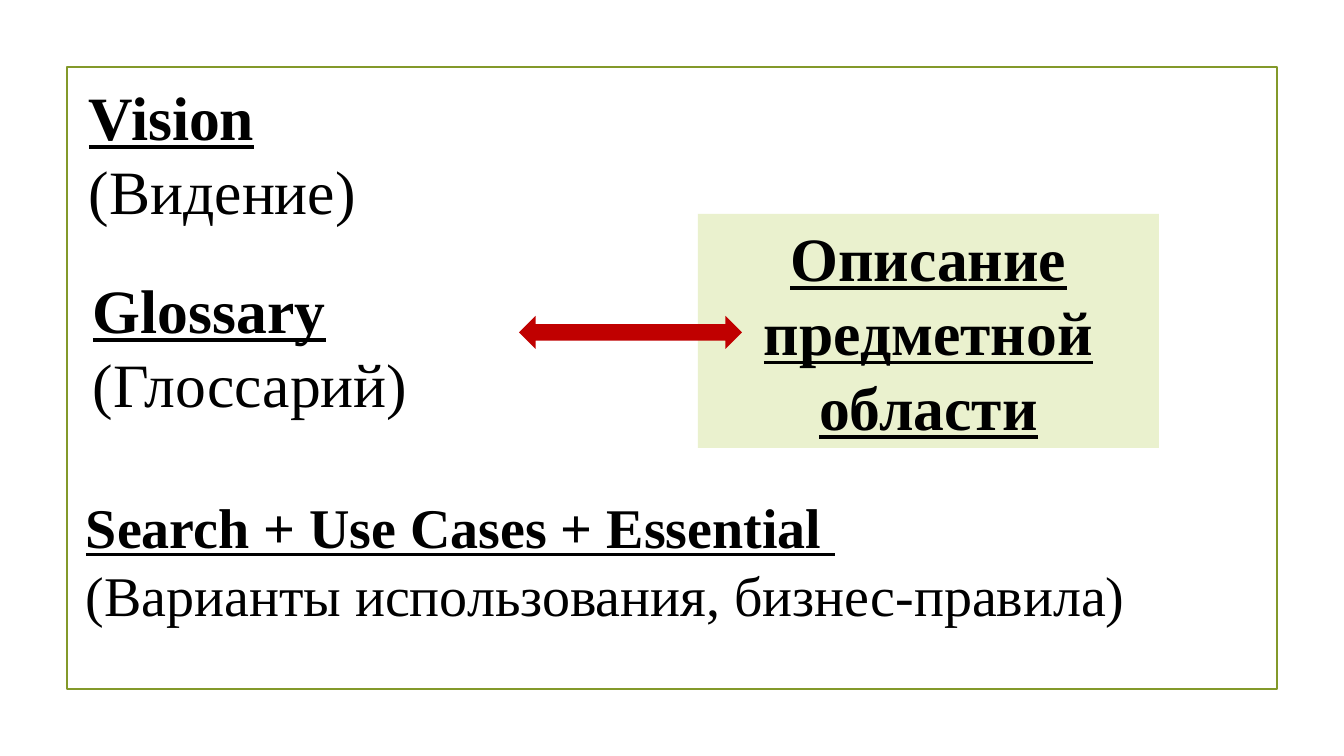
import pptx
import pptx.util
import pptx.dml.color
import pptx.enum.shapes
import pptx.enum.text

HEAD, PLAIN = True, False

# Each text: box in px, type size key, paragraphs made of (style, words)
NOTES = [
    ((79, 73, 461, 159), "large",
     [[(HEAD, "Vision")], [(PLAIN, "(Видение)")]]),
    ((83, 266, 393, 159), "large",
     [[(HEAD, "Glossary "), (PLAIN, "(Глоссарий)")]]),
    ((76, 487, 1159, 146), "small",
     [[(HEAD, "Search + Use Cases + Essential ")],
      [(PLAIN, "(Варианты использования, бизнес-правила)")]]),
]
DOMAIN = [[(HEAD, word)] for word in ("Описание", "предметной", "области")]
FRAME = (67, 67, 1210, 622)
PANEL = (698, 214, 461, 234)
ARROW = (519, 316, 223, 33)
PAGE = (1344, 756)

THEME = {
    "font": "Times New Roman", "large": 44, "small": 40, "pitch": 1.21,
    "ink": "000000", "frame": "83992A", "panel": "EAF1CE", "arrow": "C00000",
}
SCALE = 914400 / 100.8
KIND = pptx.enum.shapes.MSO_SHAPE
ALIGN = pptx.enum.text.PP_ALIGN


def emu(box):
    return [round(n * SCALE) for n in box]


def tint(key):
    return pptx.dml.color.RGBColor.from_string(THEME[key])


def block(kind, box, fill=None, line=None):
    shape = slide.shapes.add_shape(kind, *emu(box))
    shape.shadow.inherit = False
    if fill:
        shape.fill.solid()
        shape.fill.fore_color.rgb = tint(fill)
    else:
        shape.fill.background()
    if line:
        shape.line.color.rgb = tint(line)
        shape.line.width = pptx.util.Pt(1.25)
    else:
        shape.line.fill.background()
    return shape


def write(shape, paras, size, align=ALIGN.LEFT):
    frame = shape.text_frame
    frame.word_wrap = True
    frame.auto_size = pptx.enum.text.MSO_AUTO_SIZE.SHAPE_TO_FIT_TEXT
    frame.vertical_anchor = pptx.enum.text.MSO_ANCHOR.TOP
    for i, runs in enumerate(paras):
        para = frame.add_paragraph() if i else frame.paragraphs[0]
        para.alignment = align
        para.line_spacing = pptx.util.Pt(THEME[size] * THEME["pitch"])
        para.font.name = THEME["font"]
        para.font.size = pptx.util.Pt(THEME[size])
        para.font.color.rgb = tint("ink")
        for style, words in runs:
            run = para.add_run()
            run.text = words
            run.font.bold = run.font.underline = style


deck = pptx.Presentation()
deck.slide_width, deck.slide_height = emu(PAGE)
slide = deck.slides.add_slide(deck.slide_layouts[6])

block(KIND.RECTANGLE, FRAME, line="frame")
panel = block(KIND.RECTANGLE, PANEL, fill="panel")
write(panel, DOMAIN, "large", ALIGN.CENTER)
block(KIND.LEFT_RIGHT_ARROW, ARROW, fill="arrow")
for box, size, paras in NOTES:
    write(slide.shapes.add_textbox(*emu(box)), paras, size)

deck.save("out.pptx")
